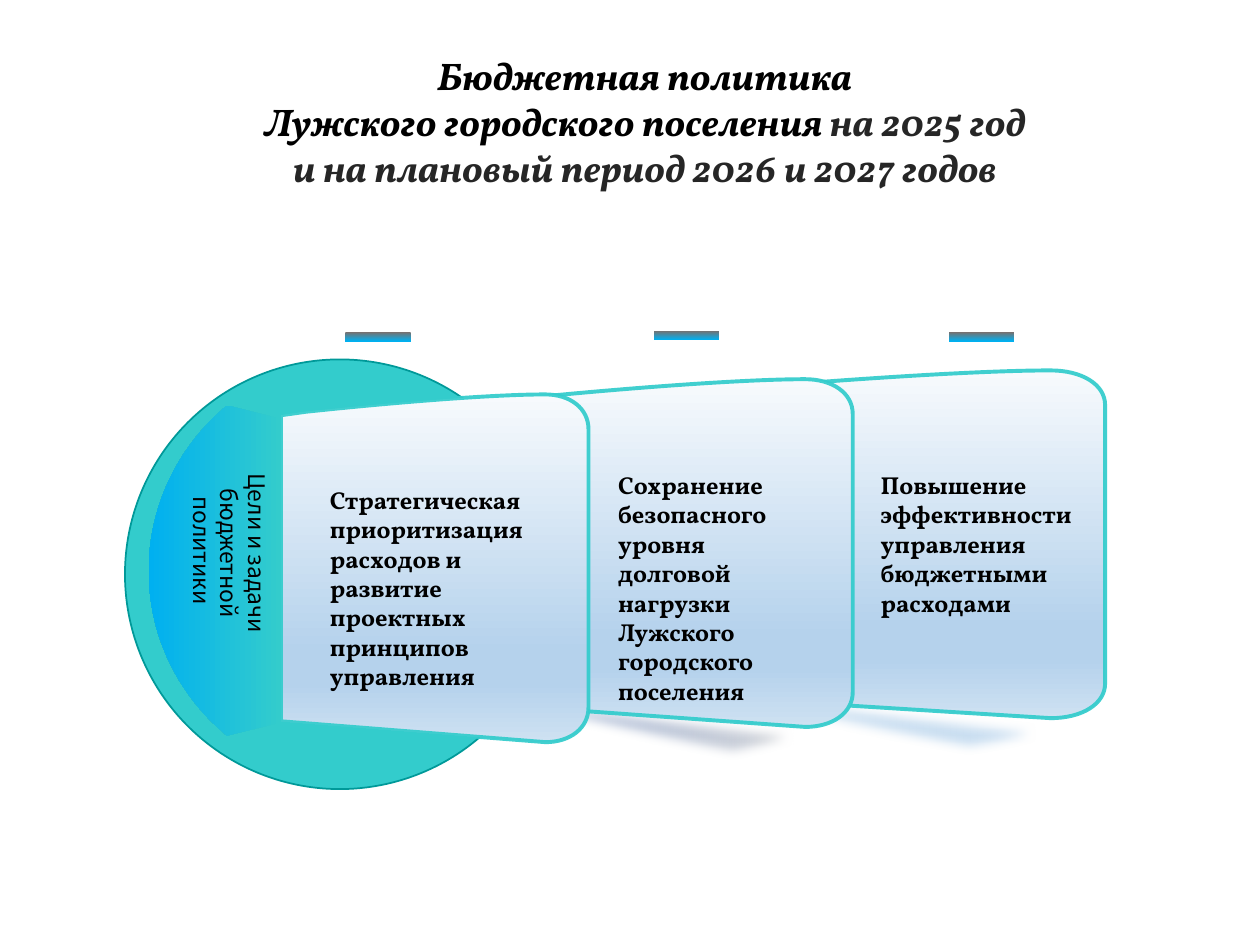
"""Build the slide on the goals of the town budget policy."""
from lxml import etree
from pptx import Presentation
from pptx.dml.color import RGBColor
from pptx.enum.shapes import MSO_SHAPE
from pptx.enum.text import MSO_ANCHOR, MSO_AUTO_SIZE, PP_ALIGN
from pptx.oxml.ns import qn
from pptx.util import Pt

OVAL, BAR = MSO_SHAPE.OVAL, MSO_SHAPE.RECTANGLE
CENTER, LEFT = PP_ALIGN.CENTER, PP_ALIGN.LEFT
TOP, NO_FIT = MSO_ANCHOR.TOP, MSO_AUTO_SIZE.NONE
BLACK = RGBColor(0x00, 0x00, 0x00)
CHARCOAL = RGBColor(0x26, 0x26, 0x26)
TURQUOISE = RGBColor(0x33, 0xCC, 0xCC)
TEAL = RGBColor(0x00, 0x99, 0x99)
AZURE = RGBColor(0x00, 0xB0, 0xF0)
GRAY = RGBColor(0x76, 0x71, 0x71)
PERIWINKLE = RGBColor(0x8F, 0xAA, 0xDC)
SILVER = RGBColor(0xD9, 0xD9, 0xD9)
ICE = RGBColor(0xF7, 0xFA, 0xFD)
SKY = RGBColor(0xB5, 0xD2, 0xEC)
MIST = RGBColor(0xCE, 0xE1, 0xF2)
SERIF, SANS = "Vollkorn", "Noto Sans CJK SC"

TITLE = [
    [("Бюджетная политика", BLACK)],
    [("Лужского городского поселения ", BLACK), ("на 2025 год", CHARCOAL)],
    [("и на плановый период 2026 и 2027 годов", CHARCOAL)],
]
TITLE_BOX = (25.4, 25.9, 686.2, 87.1)
HUB_TEXT = "Цели и задачи бюджетной политики \v"
HUB_TEXT_BOX = (78.5, 263.5, 79.9, 114.5)
HUB_BOX = (71.4, 205.4, 245.5, 245.5)
FAN_BOX = (85, 231.8, 75.6, 188.6)
BAR_PLACES = [(197.3, 190), (373.7, 189.2), (542.2, 190)]
BAR_SIZE = (37.4, 5)

CARD_GRADIENT = [(0, ICE), (74, SKY), (83, SKY), (100, MIST)]
CARDS = [
    {"text": "Повышение эффективности управления бюджетными расходами",
     "box": (409, 211.7, 222.5, 198.7), "text_box": (496.1, 265, 130.3, 92.6),
     "shadow_box": (298.1, 396.7, 321.1, 23), "shadow": (CARD_GRADIENT, 90)},
    {"text": "Сохранение безопасного уровня долговой нагрузки "
             "Лужского городского поселения",
     "box": (293.8, 216.7, 193.5, 198.7), "text_box": (346.1, 265, 118.1, 143),
     "shadow_box": (197.3, 401, 278.6, 23),
     "shadow": ([(0, PERIWINKLE), (100, SILVER)], 0)},
    {"text": "Стратегическая приоритизация расходов и развитие "
             "проектных принципов управления",
     "box": (160.6, 225.4, 175.7, 198.7), "text_box": (181.4, 273.5, 147.6, 126)},
]
SHADOW_TILT = 7

CARD_OUTLINE = [
    [(0.86, 0)], [(0.94, 0), (1, 0.04), (1, 0.1)], [(1, 0.9)],
    [(1, 0.96), (0.94, 1), (0.86, 1)], [(0, 0.94)], [(0, 0.06)], [(0.08, 0.05)],
    [(0.4, 0.02), (0.7, 0), (0.86, 0)],
]
SHADOW_OUTLINE = [
    [(0, 0)], [(0.24, 0.29), (0.57, 0.86), (0.8, 1)],
    [(0.87, 0.74), (0.9, 0.6), (1, 0)], [(0, 0)],
]
FAN_OUTLINE = [
    [(0.6, 0)], [(1, 0.04)], [(1, 0.96)], [(0.59, 1)], [(0.48, 0.96)],
    [(0.18, 0.84), (0, 0.68), (0, 0.5)], [(0, 0.3), (0.23, 0.12), (0.59, 0)],
]


def lengths(values):
    return [Pt(value) for value in values]


def paint(shape, stops, angle):
    shape.shadow.inherit = False
    shape.fill.gradient()
    shape.fill.gradient_angle = -angle % 360
    stop_list = shape._element.spPr.find(qn("a:gradFill")).find(qn("a:gsLst"))
    for old_stop in list(stop_list):
        stop_list.remove(old_stop)
    for position, color in stops:
        stop = etree.SubElement(stop_list, qn("a:gs"), pos=str(position * 1000))
        etree.SubElement(stop, qn("a:srgbClr"), val=str(color))
    shape.line.fill.background()


def bend(shape, outline):
    lines = iter(list(shape._element.iter(qn("a:lnTo"))))
    for segment in outline[1:]:
        first, *others = [next(lines) for _ in segment]
        if others:
            curve = etree.Element(qn("a:cubicBezTo"))
            first.addprevious(curve)
            for line in (first, *others):
                curve.append(line[0])
                line.getparent().remove(line)


def add_outline(slide, outline, box, stops, angle):
    left, top, width, height = box
    points = [(Pt(left + x * width), Pt(top + y * height))
              for segment in outline for x, y in segment]
    builder = slide.shapes.build_freeform(*points[0], scale=1.0)
    builder.add_line_segments(points[1:], close=True)
    shape = builder.convert_to_shape()
    bend(shape, outline)
    paint(shape, stops, angle)
    return shape


def draw_edge(shape, width):
    shape.line.color.rgb, shape.line.width = TURQUOISE, Pt(width)
    color = shape.line._ln.find(qn("a:solidFill"))[0]
    etree.SubElement(color, qn("a:alpha"), val="93000")


def add_text(slide, text, box, font, size, bold=False, align=LEFT):
    frame = slide.shapes.add_textbox(*lengths(box)).text_frame
    frame.word_wrap = True
    para = frame.paragraphs[0]
    para.text = text
    para.alignment = align
    para.font.name, para.font.size, para.font.bold = font, Pt(size), bold
    para.font.color.rgb = BLACK
    return frame


def add_title(slide):
    title = slide.shapes.title
    title.left, title.top, title.width, title.height = lengths(TITLE_BOX)
    frame = title.text_frame
    frame.word_wrap, frame.auto_size, frame.vertical_anchor = True, NO_FIT, TOP
    for number, spans in enumerate(TITLE):
        para = frame.add_paragraph() if number else frame.paragraphs[0]
        para.alignment = CENTER
        para.font.name, para.font.size = SERIF, Pt(22)
        para.font.bold = para.font.italic = True
        for text, color in spans:
            span = para.add_run()
            span.text = text
            span.font.color.rgb = color


def add_hub(slide):
    hub = slide.shapes.add_shape(OVAL, *lengths(HUB_BOX))
    hub.shadow.inherit = False
    hub.fill.solid()
    hub.fill.fore_color.rgb = TURQUOISE
    hub.line.color.rgb, hub.line.width = TEAL, Pt(1)


def add_card(slide, card):
    if "shadow" in card:
        shadow = add_outline(slide, SHADOW_OUTLINE, card["shadow_box"], *card["shadow"])
        shadow.rotation = SHADOW_TILT
        draw_edge(shadow, 1)
        effects = shadow._element.spPr.find(qn("a:effectLst"))
        etree.SubElement(effects, qn("a:softEdge"), rad=str(Pt(6)))
    shape = add_outline(slide, CARD_OUTLINE, card["box"], CARD_GRADIENT, 90)
    draw_edge(shape, 2.25)


def main():
    deck = Presentation()
    deck.slide_width, deck.slide_height = Pt(720), Pt(540)
    slide = deck.slides.add_slide(deck.slide_layouts[5])
    add_title(slide)
    add_hub(slide)
    for card in CARDS:
        add_card(slide, card)
    add_outline(slide, FAN_OUTLINE, FAN_BOX, [(0, TURQUOISE), (100, AZURE)], 180)
    hub_text = add_text(slide, HUB_TEXT, HUB_TEXT_BOX, SANS, 13, align=CENTER)
    hub_text._txBody.bodyPr.set("vert", "eaVert")
    for place in BAR_PLACES:
        bar = slide.shapes.add_shape(BAR, *lengths(place + BAR_SIZE))
        paint(bar, [(0, GRAY), (100, AZURE)], 90)
    for card in CARDS:
        add_text(slide, card["text"], card["text_box"], SERIF, 14, bold=True)
    deck.save("out.pptx")


if __name__ == "__main__":
    main()
